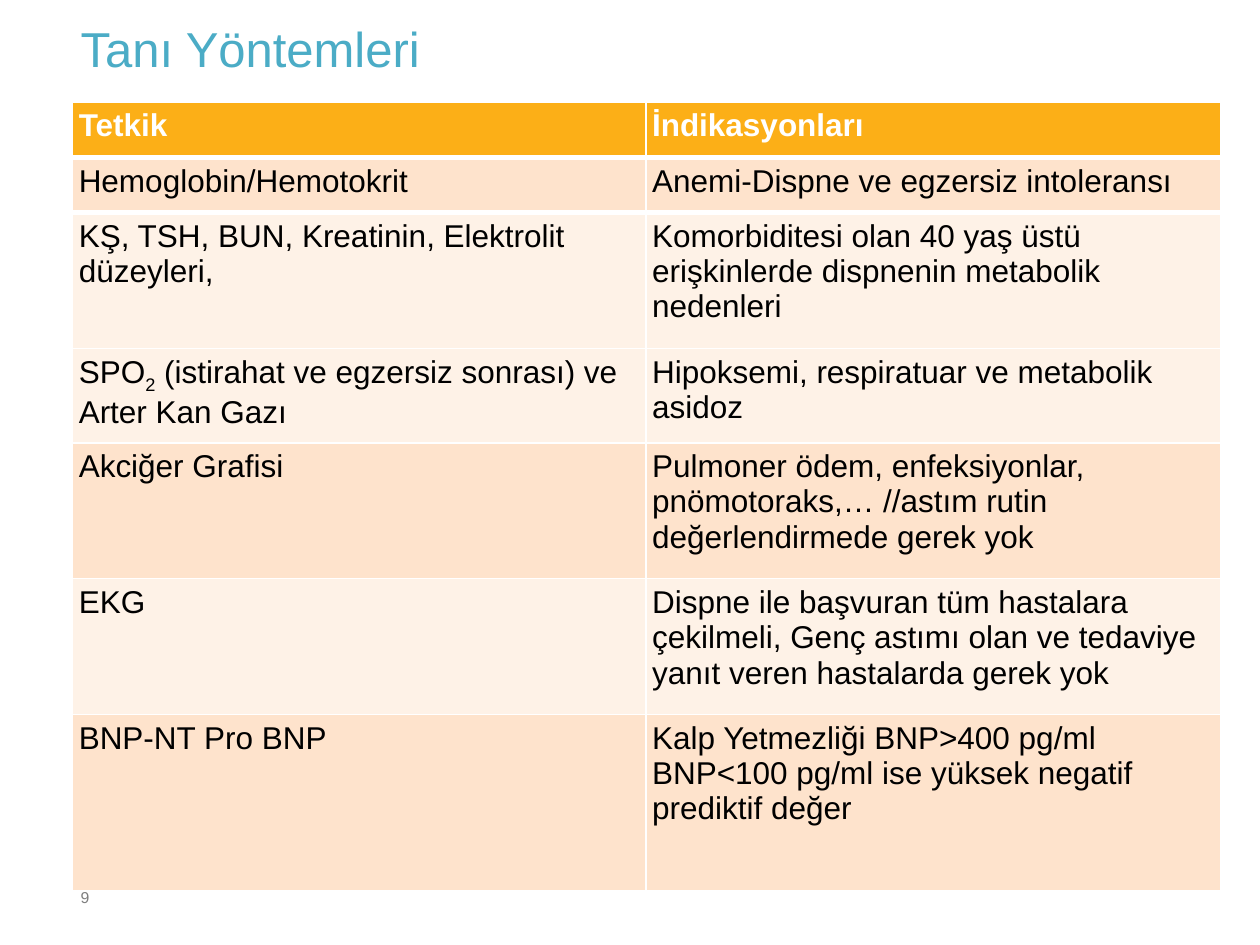
from lxml import etree
from pptx import Presentation
from pptx import util as u
from pptx.dml.color import RGBColor
from pptx.enum import text
from pptx.oxml.ns import qn

COLORS = {"title": "4BACC6", "header": "FCAF17", "dark": "FEE3CC", "light": "FEF2E7",
          "white": "FFFFFF", "black": "000000", "gray": "7F7F7F"}
FONT = "Arial"
INSET = 3.6
THIN, THICK = 1, 3

COL_WIDTHS = [327.6, 328.4]
ROWS = [
    (31.6, "header", ["Tetkik"], ["İndikasyonları"]),
    (31.6, "dark", ["Hemoglobin/Hemotokrit"], ["Anemi-Dispne ve egzersiz intoleransı"]),
    (77.6, "light", ["KŞ, TSH, BUN, Kreatinin, Elektrolit düzeyleri,"],
     ["Komorbiditesi olan 40 yaş üstü erişkinlerde dispnenin metabolik nedenleri"]),
    (54, "light", [["SPO", ("2", -25000), " (istirahat ve egzersiz sonrası) ve Arter Kan Gazı"]],
     ["Hipoksemi, respiratuar ve metabolik asidoz"]),
    (77.6, "dark", ["Akciğer Grafisi"],
     ["Pulmoner ödem, enfeksiyonlar, pnömotoraks,… //astım rutin değerlendirmede gerek yok"]),
    (77.6, "light", ["EKG"],
     ["Dispne ile başvuran tüm hastalara çekilmeli, Genç astımı olan ve tedaviye "
      "yanıt veren hastalarda gerek yok"]),
    (100.8, "dark", ["BNP-NT Pro BNP"],
     ["Kalp Yetmezliği BNP>400 pg/ml", "BNP<100 pg/ml ise yüksek negatif prediktif değer"]),
]


def rgb(name):
    return RGBColor.from_string(COLORS[name])


def add_run(p, words, size, color, bold=False, baseline=0):
    r = p.add_run()
    r.text = words
    r.font.name, r.font.size, r.font.bold = FONT, u.Pt(size), bold
    r.font.color.rgb = rgb(color)
    if baseline:
        r.font._element.set("baseline", str(baseline))


def set_margins(box):
    box.margin_left = box.margin_top = box.margin_right = box.margin_bottom = u.Pt(INSET)


def add_text(s, box, words, size, color, wrap=True):
    tf = s.shapes.add_textbox(*map(u.Pt, box)).text_frame
    set_margins(tf)
    tf.word_wrap = wrap
    add_run(tf.paragraphs[0], words, size, color)
    return tf


def set_borders(cell, widths):
    tc_pr = cell._tc.get_or_add_tcPr()
    for i, (side, width) in enumerate(widths.items()):
        ln = etree.Element(qn(f"a:ln{side}"), w=str(u.Pt(width)))
        fill = etree.SubElement(ln, qn("a:solidFill"))
        etree.SubElement(fill, qn("a:srgbClr"), val=COLORS["white"])
        tc_pr.insert(i, ln)


def fill_cell(cell, paragraphs, fill, row):
    set_margins(cell)
    cell.fill.solid()
    cell.fill.fore_color.rgb = rgb(fill)
    header = row == 0
    tf = cell.text_frame
    for i, runs in enumerate(paragraphs):
        p = tf.add_paragraph() if i else tf.paragraphs[0]
        for run in [runs] if isinstance(runs, str) else runs:
            words, baseline = (run, 0) if isinstance(run, str) else run
            add_run(p, words, 18, "white" if header else "black", header, baseline)
    set_borders(cell, {"L": THIN, "R": THIN,
                       "T": THICK if row in (1, 2) else THIN,
                       "B": THICK if row in (0, 1) else THIN})


prs = Presentation()
prs.slide_width, prs.slide_height = u.Pt(720), u.Pt(540)
s = prs.slides.add_slide(prs.slide_layouts[6])

title = add_text(s, (42.5, 15.1, 655.2, 63.4), "Tanı Yöntemleri", 28, "title")
title.paragraphs[0].line_spacing = 0.75

heights = [row[0] for row in ROWS]
table = s.shapes.add_table(len(ROWS), len(COL_WIDTHS), u.Pt(41.4), u.Pt(58.3),
                           u.Pt(sum(COL_WIDTHS)), u.Pt(sum(heights))).table
for column, width in zip(table.columns, COL_WIDTHS):
    column.width = u.Pt(width)
for i, (height, fill, *cells) in enumerate(ROWS):
    table.rows[i].height = u.Pt(height)
    for j, paragraphs in enumerate(cells):
        fill_cell(table.cell(i, j), paragraphs, fill, i)

number = add_text(s, (42.5, 504, 13, 16.6), "9", 9, "gray", wrap=False)
number.auto_size = text.MSO_AUTO_SIZE.SHAPE_TO_FIT_TEXT

prs.save("out.pptx")
